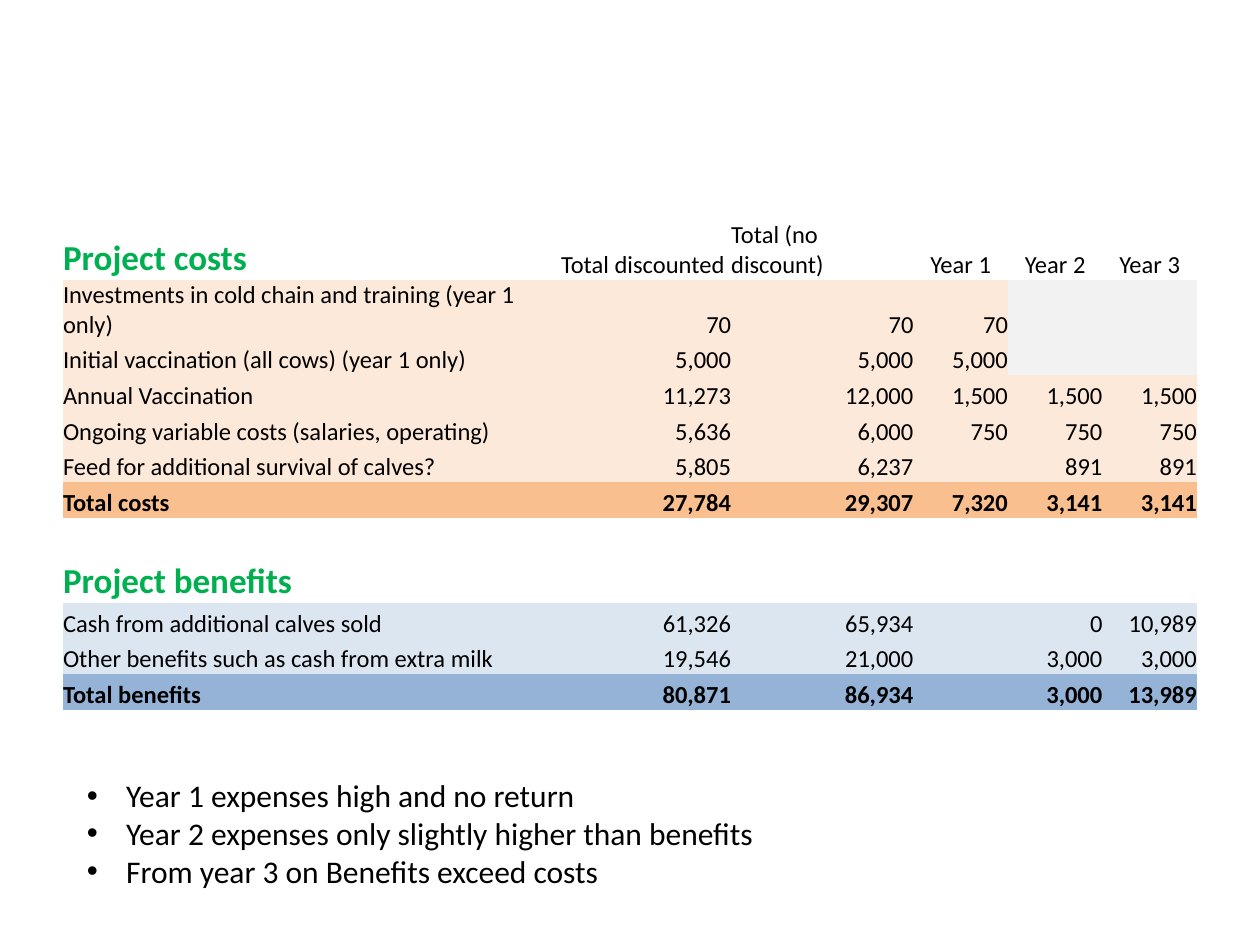
from dataclasses import dataclass

from lxml.etree import SubElement
from pptx import Presentation
from pptx.dml.color import RGBColor as RGB
from pptx.enum.text import MSO_ANCHOR as Anchor, MSO_AUTO_SIZE as AutoSize, PP_ALIGN as Align
from pptx.oxml.ns import qn
from pptx.util import Pt


@dataclass(frozen=True)
class Theme:
    font: str = "Calibri"
    ink: str = "000000"
    heading: str = "00B050"
    cost: str = "FDE9D9"
    cost_total: str = "FABF8F"
    benefit: str = "DCE6F1"
    benefit_total: str = "95B3D7"
    unused: str = "F2F2F2"
    heading_size: int = 20
    body_size: int = 14
    bullet_size: int = 18


theme = Theme()
NO_STYLE = "{2D5ABB26-0587-4C30-8999-92F81FD0307C}"

# Each row: fill colour, then its cell texts
rows = [
    (None, ["Project costs", "Total discounted", "Total (no discount)", "Year 1", "Year 2", "Year 3"]),
    (theme.cost, ["Investments in cold chain and training (year 1 only)", "70", "70", "70", "", ""]),
    (theme.cost, ["Initial vaccination (all cows) (year 1 only)", "5,000", "5,000", "5,000", "", ""]),
    (theme.cost, ["Annual Vaccination", "11,273", "12,000", "1,500", "1,500", "1,500"]),
    (theme.cost, ["Ongoing variable costs (salaries, operating)", "5,636", "6,000", "750", "750", "750"]),
    (theme.cost, ["Feed for additional survival of calves?", "5,805", "6,237", "", "891", "891"]),
    (theme.cost_total, ["Total costs", "27,784", "29,307", "7,320", "3,141", "3,141"]),
    (None, [""] * 6),
    (None, ["Project benefits"] + [""] * 5),
    (theme.benefit, ["Cash from additional calves sold", "61,326", "65,934", "", "0", "10,989"]),
    (theme.benefit, ["Other benefits such as cash from extra milk", "19,546", "21,000", "", "3,000", "3,000"]),
    (theme.benefit_total, ["Total benefits", "80,871", "86,934", "", "3,000", "13,989"]),
]
column_widths = [284.6, 97.2, 104.2, 54, 54, 54]
heading_height, row_height = 28.5, 20.35
conclusions = [
    "Year 1 expenses high and no return",
    "Year 2 expenses only slightly higher than benefits",
    "From year 3 on Benefits exceed costs",
]


def style_runs(paragraph, size, color, bold=False):
    for run in paragraph.runs:
        run.font.name = theme.font
        run.font.size = Pt(size)
        run.font.bold = bold
        run.font.color.rgb = RGB.from_string(color)


prs = Presentation()
prs.slide_width, prs.slide_height = Pt(720), Pt(540)
slide = prs.slides.add_slide(prs.slide_layouts[6])

# Costs and benefits
budget = slide.shapes.add_table(
    len(rows), len(column_widths), Pt(36), Pt(126), Pt(648), Pt(279)
).table
budget.first_row = budget.horz_banding = False
budget._tbl.tblPr.find(qn("a:tableStyleId")).text = NO_STYLE
for column, width in zip(budget.columns, column_widths):
    column.width = Pt(width)

for r, (fill, texts) in enumerate(rows):
    has_heading = texts[0].startswith("Project")
    is_total = texts[0].startswith("Total")
    budget.rows[r].height = Pt(heading_height if has_heading else row_height)
    for c, text in enumerate(texts):
        cell = budget.cell(r, c)
        cell.margin_left = cell.margin_right = cell.margin_top = cell.margin_bottom = 0
        cell.vertical_anchor = Anchor.BOTTOM
        if fill:
            cell.fill.solid()
            unused = r in (1, 2) and not text
            cell.fill.fore_color.rgb = RGB.from_string(theme.unused if unused else fill)
        else:
            cell.fill.background()

        entry = cell.text_frame.paragraphs[0]
        if not text:
            # An empty cell keeps the body size so that its row does not grow
            SubElement(entry._p, qn("a:endParaRPr"), sz=str(theme.body_size * 100))
            continue
        entry.text = text
        if has_heading and c == 0:
            style_runs(entry, theme.heading_size, theme.heading, bold=True)
        else:
            style_runs(entry, theme.body_size, theme.ink, bold=is_total)
        if r == 0:
            entry.alignment = Align.CENTER if c >= 3 else Align.LEFT
        else:
            entry.alignment = Align.RIGHT if c else Align.LEFT

# Conclusions
summary = slide.shapes.add_textbox(Pt(42.5), Pt(440), Pt(652), Pt(72.7)).text_frame
summary.word_wrap = True
summary.auto_size = AutoSize.SHAPE_TO_FIT_TEXT
summary.text = "\n".join(conclusions)
for point in summary.paragraphs:
    style_runs(point, theme.bullet_size, theme.ink)
    properties = point._p.get_or_add_pPr()
    properties.set("marL", str(Pt(22.5)))
    properties.set("indent", str(-Pt(22.5)))
    SubElement(properties, qn("a:buFont"), typeface="Arial")
    SubElement(properties, qn("a:buChar"), char="•")

prs.save("out.pptx")
